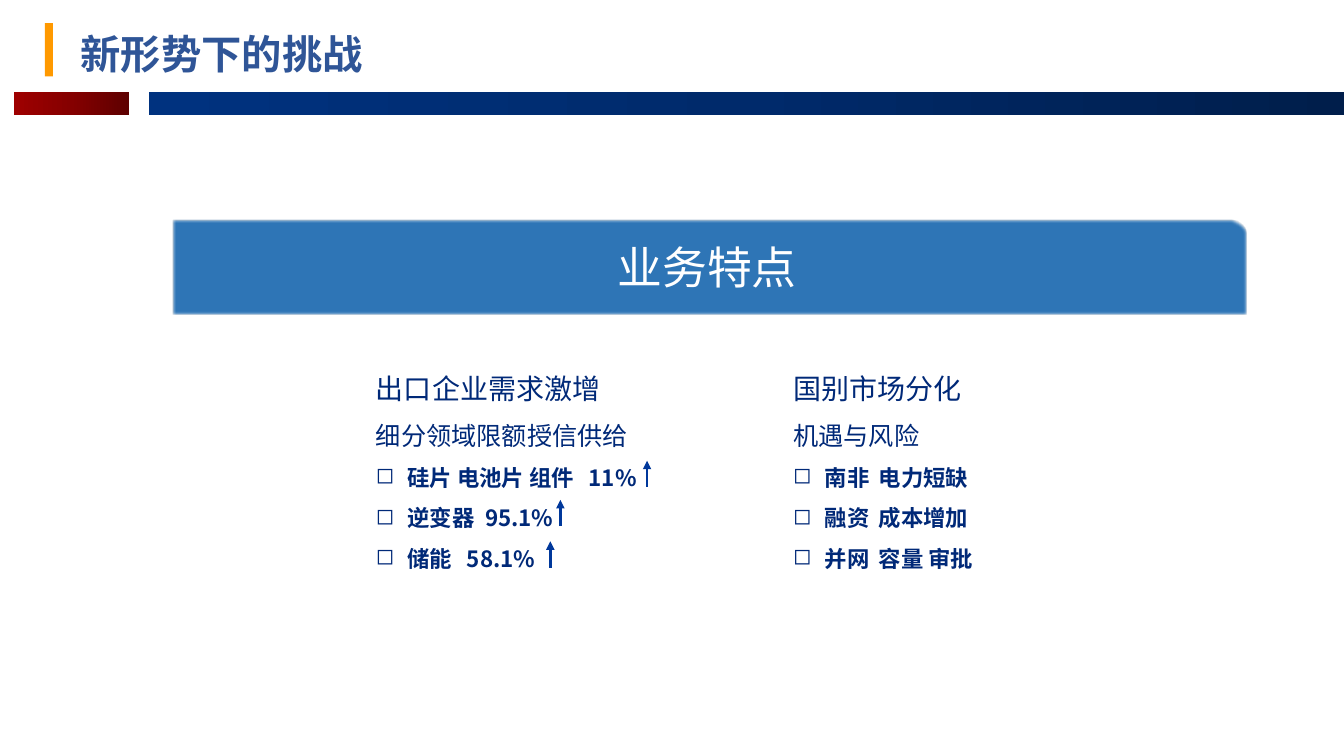
import copy

import pptx
import pptx.dml.color
import pptx.enum.shapes
import pptx.enum.text
import pptx.oxml.ns
import pptx.util
from lxml import etree

Pt = pptx.util.Pt
SHAPES = pptx.enum.shapes.MSO_SHAPE
ALIGN = pptx.enum.text.PP_ALIGN
ANCHOR = pptx.enum.text.MSO_ANCHOR
qn = pptx.oxml.ns.qn

COLORS = {
    "accent": "FF9900", "banner": "2E75B6", "banner_line": "43739E",
    "title": "2F5597", "text": "002978", "arrow": "00389B", "white": "FFFFFF",
}
CJK_FONT = "Noto Sans CJK SC"


def rgb(value):
    return pptx.dml.color.RGBColor.from_string(COLORS.get(value, value))


def add_text(para, text, color, face=CJK_FONT, **formats):
    """Add one run, with its typeface set for Latin and East Asian text."""
    span = para.add_run()
    span.text = text
    for name, value in {"name": face, **formats}.items():
        setattr(span.font, name, value)
    span.font.color.rgb = rgb(color)
    etree.SubElement(span.font._element, qn("a:ea"), typeface=face)


deck = pptx.Presentation()
deck.slide_width, deck.slide_height = Pt(960), Pt(540)
page = deck.slides.add_slide(deck.slide_layouts[5])

# Header: accent mark and two gradient bars
accent = page.shapes.add_shape(SHAPES.RECTANGLE, Pt(32), Pt(16.5), Pt(5.8), Pt(38))
accent.shadow.inherit = False
accent.fill.solid()
accent.fill.fore_color.rgb = rgb("accent")
accent.line.fill.background()

for left, width, shades in [
    (10, 82, ["5E0000", "850000", "9E0000"]),
    (106.5, 853.5, ["001E4B", "002A6B", "00327F"]),
]:
    bar = page.shapes.add_shape(SHAPES.RECTANGLE, Pt(left), Pt(65.5), Pt(width), Pt(16.5))
    bar.shadow.inherit = False
    bar.line.fill.background()
    bar.fill.gradient()
    bar.fill.gradient_angle = 180
    stop_list = bar._element.spPr.find(".//" + qn("a:gsLst"))
    stop_list.append(copy.deepcopy(stop_list[-1]))
    for stop, shade, position in zip(bar.fill.gradient_stops, shades, [0, 0.5, 1]):
        stop.color.rgb = rgb(shade)
        stop.position = position

# Title
title = page.shapes.title
title.left, title.top, title.width, title.height = Pt(50.4), Pt(17.3), Pt(643.7), Pt(46)
title.text_frame.vertical_anchor = ANCHOR.MIDDLE
para = title.text_frame.paragraphs[0]
para.alignment = ALIGN.LEFT
para.line_spacing = 0.9
add_text(para, "新形势下的挑战", "title", "Montserrat", size=Pt(28.8), bold=True)

# Banner
banner = page.shapes.add_shape(
    SHAPES.ROUND_1_RECTANGLE, Pt(123.8), Pt(157), Pt(766), Pt(67))
banner.shadow.inherit = False
etree.SubElement(banner._element.spPr.find(qn("a:effectLst")), qn("a:softEdge"), rad="12700")
banner.fill.solid()
banner.fill.fore_color.rgb = rgb("banner")
banner.line.color.rgb = rgb("banner_line")
banner.line.width = Pt(1)
banner.text_frame.vertical_anchor = ANCHOR.MIDDLE
para = banner.text_frame.paragraphs[0]
para.alignment = ALIGN.CENTER
add_text(para, "业务特点", "white", size=Pt(32))

# Two columns: heading, subheading, bullets with the tab stop of each in points
COLUMNS = [
    (559.5, 203, "国别市场分化", "机遇与风险",
     [("南非\t电力短缺", 61.2), ("融资\t成本增加", 61.2), ("并网\t容量 审批", 61.2)]),
    (261.5, 263.5, "出口企业需求激增", "细分领域限额授信供给",
     [("硅片 电池片 组件\t11%", 152), ("逆变器\t95.1%", 78), ("储能\t58.1%", 65)]),
]
INDENT = Pt(22.5)
for left, width, heading, subheading, bullets in COLUMNS:
    box = page.shapes.add_textbox(Pt(left), Pt(250), Pt(width), Pt(192))
    frame = box.text_frame
    frame.word_wrap = True
    frame.auto_size = pptx.enum.text.MSO_AUTO_SIZE.SHAPE_TO_FIT_TEXT
    add_text(frame.paragraphs[0], heading, "text", size=Pt(20))
    add_text(frame.add_paragraph(), subheading, "text", size=Pt(18))
    for text, tab_stop in bullets:
        para = frame.add_paragraph()
        settings = para._p.get_or_add_pPr()
        settings.set("marL", str(INDENT))
        settings.set("indent", str(-INDENT))
        etree.SubElement(settings, qn("a:buChar"), char="◻")
        tabs = etree.SubElement(settings, qn("a:tabLst"))
        etree.SubElement(tabs, qn("a:tab"), pos=str(Pt(tab_stop)), algn="l")
        add_text(para, text, "text", size=Pt(16), bold=True)
    for para in frame.paragraphs:
        para.line_spacing = 1.5

# Rising arrows beside the growth figures
for x, bottom in [(462.2, 347.8), (400.3, 375.8), (393.1, 405.4)]:
    arrow = page.shapes.add_connector(
        pptx.enum.shapes.MSO_CONNECTOR.STRAIGHT, Pt(x), Pt(bottom), Pt(x), Pt(bottom - 18.7))
    arrow.line.color.rgb = rgb("arrow")
    arrow.line.width = Pt(2)
    etree.SubElement(arrow.line._get_or_add_ln(), qn("a:tailEnd"), type="triangle")
    etree.SubElement(arrow._element.spPr, qn("a:effectLst"))

deck.save("out.pptx")
